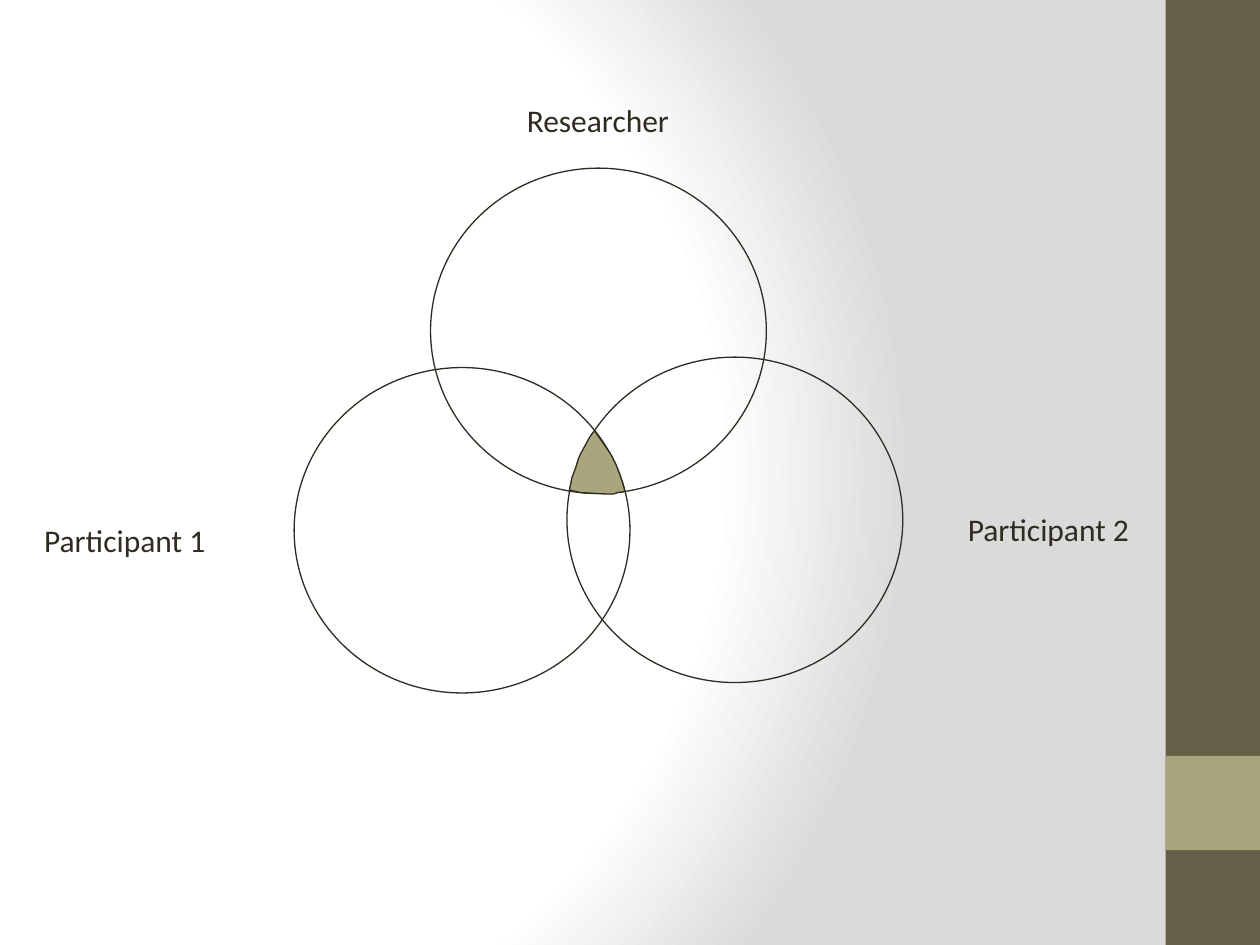
from pptx import Presentation
from pptx.dml.color import RGBColor
from pptx.enum.shapes import MSO_SHAPE
from pptx.enum.text import MSO_AUTO_SIZE
from pptx.oxml import parse_xml
from pptx.oxml.ns import nsdecls, qn
from pptx.util import Cm, Pt

INK = RGBColor(0x2F, 0x2B, 0x20)
BROWN = RGBColor(0x67, 0x5E, 0x47)
SAGE = RGBColor(0xA9, 0xA5, 0x7C)
WHITE = RGBColor(0xFF, 0xFF, 0xFF)
GREY = RGBColor(0xDA, 0xDA, 0xDA)

WIDE, HIGH = 25.4, 19.05
BAR = 1.9
RING = (6.77, 6.56)

# left, top of each ring
RINGS = [(5.93, 7.41), (11.43, 7.2), (8.68, 3.39)]

# text, left, top
LABELS = [
    ("Researcher", 10.37, 1.91),
    ("Participant 1", 0.64, 10.37),
    ("Participant 2", 19.26, 10.16),
]

# outline of the shared area, in hundredths of a centimetre
CORE = [
    (1199, 869), (1222, 902), (1232, 917), (1242, 937), (1250, 958),
    (1255, 973), (1260, 991), (1245, 993), (1237, 996), (1222, 996),
    (1171, 993), (1161, 991), (1148, 988), (1153, 963), (1161, 942),
    (1166, 925), (1171, 914), (1189, 881), (1194, 874),
]


class Venn:
    def __init__(self, slide):
        self.slide = slide
        self.font = "Calibri"
        self.size = Pt(18)
        self.line = Pt(0.75)

    def paint(self, shape, fill=None, line=None):
        shape.shadow.inherit = False
        if fill is None:
            shape.fill.background()
        else:
            shape.fill.solid()
            shape.fill.fore_color.rgb = fill
        if line is None:
            shape.line.fill.background()
        else:
            shape.line.color.rgb = line
            shape.line.width = self.line

    def glow(self, stops):
        """Fill the background with a round gradient centred left of the middle."""
        self.slide.background.fill.gradient()
        old = self.slide.element.find(".//" + qn("a:gradFill"))
        marks = "".join(
            f'<a:gs pos="{pos * 1000}"><a:srgbClr val="{color}"/></a:gs>'
            for pos, color in stops
        )
        new = parse_xml(
            f'<a:gradFill {nsdecls("a")} rotWithShape="1"><a:gsLst>{marks}</a:gsLst>'
            '<a:path path="circle"><a:fillToRect l="20000" t="50000" r="100000" '
            'b="50000"/></a:path></a:gradFill>'
        )
        old.getparent().replace(old, new)

    def block(self, top, high, fill):
        shape = self.slide.shapes.add_shape(
            MSO_SHAPE.RECTANGLE, Cm(WIDE - BAR), Cm(top), Cm(BAR), Cm(high)
        )
        self.paint(shape, fill=fill)

    def ring(self, left, top):
        wide, high = RING
        shape = self.slide.shapes.add_shape(
            MSO_SHAPE.OVAL, Cm(left), Cm(top), Cm(wide), Cm(high)
        )
        self.paint(shape, line=INK)

    def label(self, text, left, top):
        box = self.slide.shapes.add_textbox(Cm(left), Cm(top), Cm(5.72), Cm(1.27))
        frame = box.text_frame
        frame.word_wrap = True
        frame.auto_size = MSO_AUTO_SIZE.SHAPE_TO_FIT_TEXT
        frame.text = text
        font = frame.paragraphs[0].runs[0].font
        font.name = self.font
        font.size = self.size
        font.color.rgb = INK

    def patch(self, points):
        pen = self.slide.shapes.build_freeform(*points[0], scale=Cm(0.01))
        pen.add_line_segments(points[1:], close=True)
        self.paint(pen.convert_to_shape(), fill=SAGE, line=INK)


def main():
    deck = Presentation()
    deck.slide_width, deck.slide_height = Cm(WIDE), Cm(HIGH)
    venn = Venn(deck.slides.add_slide(deck.slide_layouts[6]))
    venn.glow([(0, WHITE), (75, WHITE), (100, GREY)])
    venn.block(0, HIGH, BROWN)
    venn.block(15.24, BAR, SAGE)
    for spot in RINGS:
        venn.ring(*spot)
    for label in LABELS:
        venn.label(*label)
    venn.patch(CORE)
    deck.save("out.pptx")


if __name__ == "__main__":
    main()
